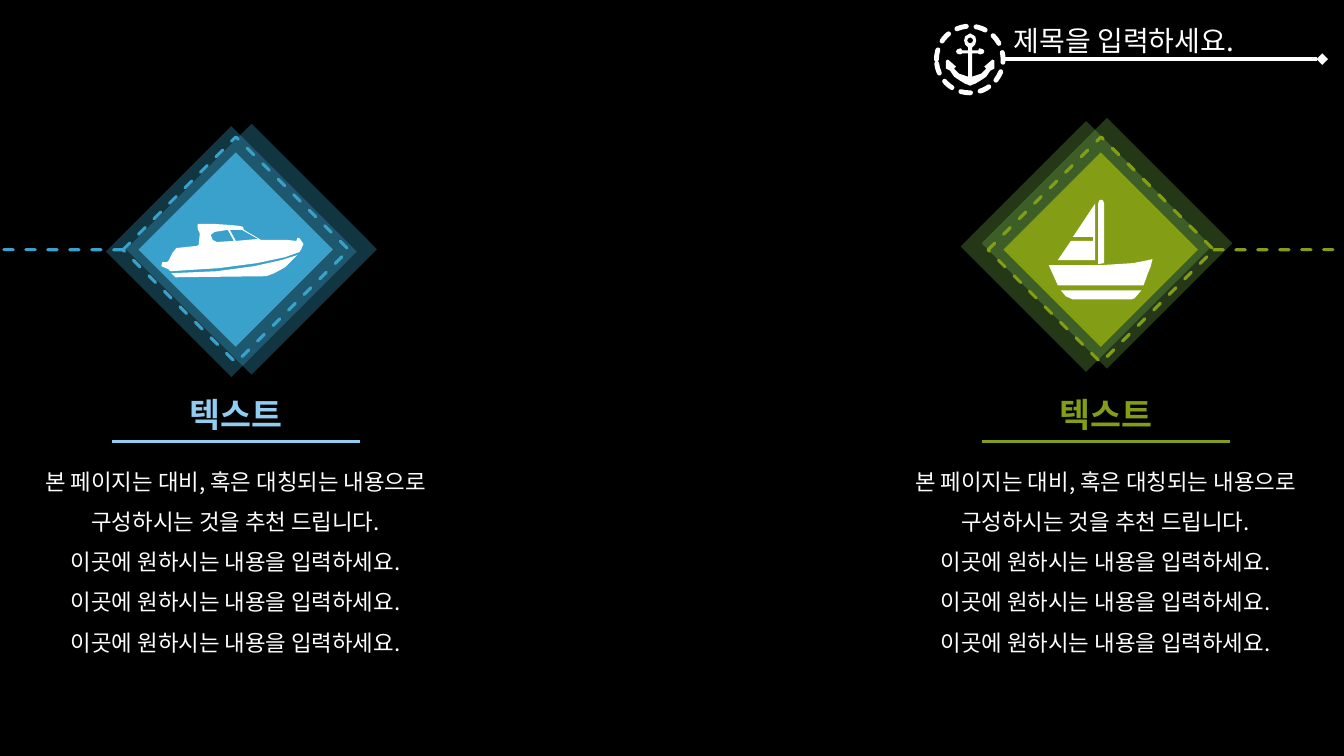
from dataclasses import dataclass
from math import dist

from lxml import etree
from pptx import Presentation
from pptx.dml.color import RGBColor
from pptx.enum.dml import MSO_LINE
from pptx.enum.shapes import MSO_CONNECTOR, MSO_SHAPE
from pptx.enum.text import MSO_ANCHOR, MSO_AUTO_SIZE, PP_ALIGN
from pptx.oxml.ns import qn
from pptx.util import Cm, Pt

DASH, SHORT_DASH = MSO_LINE.DASH, MSO_LINE.SQUARE_DOT
DIAMOND, OVAL, RECTANGLE = MSO_SHAPE.DIAMOND, MSO_SHAPE.OVAL, MSO_SHAPE.RECTANGLE
STRAIGHT = MSO_CONNECTOR.STRAIGHT
TOP, NO_AUTOSIZE = MSO_ANCHOR.TOP, MSO_AUTO_SIZE.NONE
LEFT, CENTER = PP_ALIGN.LEFT, PP_ALIGN.CENTER
LEFT_SITE, RIGHT_SITE = 1, 3
COMPARISON_LAYOUT = 4


@dataclass(frozen=True)
class Theme:
    font: str = "Noto Sans CJK KR"
    background: str = "000000"
    white: str = "FFFFFF"
    blue: str = "39A1CB"
    light_blue: str = "91CCF1"
    olive: str = "839E15"
    green: str = "70AD47"
    title_size: float = 20
    heading_size: float = 24
    body_size: float = 16
    line_width: float = 2.25
    title_line_width: float = 2.75
    badge_width: float = 3.5


THEME = Theme()
WIDTH, HEIGHT = 33.87, 19.05
CENTER_Y = 6.29
GRID = Cm(0.0254)
SHADE_STOPS = [(0, 0), (15, 65), (52, 100), (87, 70), (100, 0)]

BODY = ["본 페이지는 대비, 혹은 대칭되는 내용으로 구성하시는 것을 추천 드립니다."]
BODY += ["이곳에 원하시는 내용을 입력하세요."] * 3

ANCHOR_HALF = [
    (0, 0), (3.5, 0.5, 6.5, 4, 6.5, 7), (6.5, 10, 4.5, 12, 2.5, 13.5), (2.5, 17), (7.5, 17),
    (8, 15.5, 9.5, 15, 10.5, 15), (12.5, 15, 13.5, 16.5, 13.5, 18),
    (13.5, 20, 12, 21, 10.5, 21), (7.5, 20), (2.5, 20), (2.5, 43),
    (8.5, 43, 14.5, 38, 16.5, 35), (14.5, 33), (21.5, 26), (23.5, 27), (23.5, 35),
    (19.5, 37), (16.5, 47, 4.5, 50, 1.5, 51), (0, 51.5)]
ANCHOR_RING_HALF = [(0, 4), (2, 4, 3, 5.5, 3, 7), (3, 9, 2, 10, 0, 10)]

YACHT_HULL = [(102, 54), (15, 55), (11, 51), (76, 51, 122, 38, 136, 33),
              (121, 54, 102, 54, 102, 54)]
YACHT_CABIN = [
    (8, 47), (10, 49), (80, 48, 128, 34, 138, 30), (140, 27), (142.5, 22), (140, 19),
    (138, 16), (136, 16), (135, 19), (125, 18, 105, 17, 100, 18),
    (83, 8), (82, 5), (82, 5, 57, 0, 37, 2), (37, 7), (39, 11), (39, 14), (38, 23),
    (36, 24), (16, 26), (12, 31), (8, 39), (6, 40), (2, 40), (1, 44), (8, 47)]
YACHT_FRONT_WINDOW = [(97, 17), (75, 19), (69, 8), (81, 8)]
YACHT_SIDE_WINDOW = [(50, 13), (54, 10), (67, 8), (73, 19), (56, 20), (52, 18)]

MAST = [(55, 63), (55, 4), (55, 2, 54, 0, 52, 0), (50, 0, 49, 2, 49, 4), (49, 64)]
SAILBOAT_HULL = [(0, 65), (9, 85), (94, 85), (97, 79, 100, 71, 103, 59),
                 (103, 59, 88, 67, 0, 65)]
KEEL = [(24, 99), (82, 99), (82, 99, 87, 99, 92, 90), (12, 90), (15, 95, 19, 99, 24, 99)]
SAIL = [(46, 60), (46, 4), (24, 37), (44, 37), (44, 41), (22, 41), (9, 60)]


def flatten(outline):
    points = []
    for segment in outline:
        if len(segment) == 2:
            points.append(segment)
            continue
        start, first, second, end = points[-1], segment[:2], segment[2:4], segment[4:]
        steps = 2 if dist(start, end) < 20 else 4
        for step in range(1, steps + 1):
            t = step / steps
            weights = ((1 - t) ** 3, 3 * t * (1 - t) ** 2, 3 * t * t * (1 - t), t ** 3)
            corners = (start, first, second, end)
            points.append(tuple(sum(w * corner[axis] for w, corner in zip(weights, corners))
                                for axis in (0, 1)))
    return points


def mirror(outline):
    half = flatten(outline)
    return half + [(-x, y) for x, y in half[-2:0:-1]]


def style_line(line, color, width, dash=None):
    line.color.rgb = RGBColor.from_string(color)
    line.width = Pt(width)
    if dash is not None:
        line.dash_style = dash
        line._get_or_add_ln().set("cap", "rnd")


def style_fill(shape, color, alpha=None):
    shape.fill.solid()
    shape.fill.fore_color.rgb = RGBColor.from_string(color)
    shape.line.fill.background()
    shape.shadow.inherit = False
    if alpha is not None:
        color_element = shape._element.spPr.find(".//" + qn("a:srgbClr"))
        etree.SubElement(color_element, qn("a:alpha")).set("val", str(alpha * 1000))


def add_shade(slide):
    shape = slide.shapes.add_shape(RECTANGLE, Cm(0.33), 0, Cm(WIDTH - 0.33), Cm(HEIGHT))
    shape.line.fill.background()
    shape.shadow.inherit = False
    shape.fill.gradient()
    shape.fill.gradient_angle = 0
    stops = shape._element.spPr.find(".//" + qn("a:gsLst"))
    for stop in list(stops):
        stops.remove(stop)
    for position, alpha in SHADE_STOPS:
        stop = etree.SubElement(stops, qn("a:gs"), pos=str(position * 1000))
        color = etree.SubElement(stop, qn("a:srgbClr"), val=THEME.background)
        etree.SubElement(color, qn("a:alpha"), val=str(alpha * 1000))
    slide.shapes._spTree.insert(2, shape._element)


def add_icon(slide, left, top, *outlines):
    first, *others = [flatten(outline) for outline in outlines]
    builder = slide.shapes.build_freeform(*first[0], scale=GRID)
    builder.add_line_segments(first[1:], close=True)
    for contour in others:
        builder.move_to(*contour[0])
        builder.add_line_segments(contour[1:], close=True)
    style_fill(builder.convert_to_shape(Cm(left), Cm(top)), THEME.white)


def add_filled_diamond(slide, left, top, size, color, alpha=None):
    shape = slide.shapes.add_shape(DIAMOND, Cm(left), Cm(top), Cm(size), Cm(size))
    style_fill(shape, color, alpha)


def add_dashed_outline(slide, kind, left, top, size, color, width, dash):
    shape = slide.shapes.add_shape(kind, Cm(left), Cm(top), Cm(size), Cm(size))
    shape.fill.background()
    shape.shadow.inherit = False
    style_line(shape.line, color, width, dash)
    return shape


def add_line(slide, start, end, y, color, width, dash=None):
    line = slide.shapes.add_connector(STRAIGHT, Cm(start), Cm(y), Cm(end), Cm(y))
    style_line(line.line, color, width, dash)
    etree.SubElement(line._element.spPr, qn("a:effectLst"))
    return line


def fill_placeholder(shape, box, texts, size, color, bold=False, align=CENTER,
                     wrap=False, spacing=1.0):
    shape.left, shape.top, shape.width, shape.height = map(Cm, box)
    frame = shape.text_frame
    frame.text = "\n".join(texts)
    for name, value in {"word_wrap": wrap, "auto_size": NO_AUTOSIZE,
                        "vertical_anchor": TOP}.items():
        setattr(frame, name, value)
    paragraph_format = {"alignment": align, "line_spacing": spacing,
                        "space_before": Pt(0), "space_after": Pt(0)}
    font_format = {"name": THEME.font, "size": Pt(size), "bold": bold}
    for paragraph in frame.paragraphs:
        for name, value in paragraph_format.items():
            setattr(paragraph, name, value)
        properties = paragraph._p.get_or_add_pPr()
        properties.set("marL", "0")
        properties.set("indent", "0")
        etree.SubElement(properties, qn("a:buNone"))
        for run in paragraph.runs:
            for name, value in font_format.items():
                setattr(run.font, name, value)
            run.font.color.rgb = RGBColor.from_string(color)
            run_properties = run._r.get_or_add_rPr()
            run_properties.set("kern", "0")
            etree.SubElement(run_properties, qn("a:ea"), typeface=THEME.font)


def add_header(slide):
    fill_placeholder(slide.shapes.title, (25.29, 0.46, 6.63, 1.12), ["제목을 입력하세요."],
                     THEME.title_size, THEME.white, align=LEFT)
    add_dashed_outline(slide, OVAL, 23.6, 0.66, 1.68, THEME.white, THEME.badge_width, SHORT_DASH)
    add_icon(slide, 24.45, 0.84, mirror(ANCHOR_HALF), mirror(ANCHOR_RING_HALF))
    line = add_line(slide, 25.27, 33.32, 1.49, THEME.white, THEME.title_line_width)
    etree.SubElement(line.line._get_or_add_ln(), qn("a:tailEnd")).set("type", "diamond")


def add_column_text(slide, heading, body, center, color):
    fill_placeholder(heading, (center - 1.51, 9.8, 3.02, 1.27), ["텍스트"],
                     THEME.heading_size, color, bold=True)
    add_line(slide, center - 3.12, center + 3.12, 11.12, color, THEME.line_width)
    fill_placeholder(body, (center - 5.94, 11.32, 11.86, 6.4), BODY,
                     THEME.body_size, THEME.white, wrap=True, spacing=1.5)


def add_emblem(slide, center, halos, halo_color, color, edge, site):
    for left, top in halos:
        add_filled_diamond(slide, left, top, 6.32, halo_color, 33)
    frame = add_dashed_outline(slide, DIAMOND, center - 2.84, CENTER_Y - 2.84, 5.69,
                               color, THEME.line_width, DASH)
    add_filled_diamond(slide, center - 2.45, CENTER_Y - 2.45, 4.9, color)
    line = add_line(slide, center, edge, CENTER_Y, color, THEME.line_width, DASH)
    line.begin_connect(frame, site)


def main():
    presentation = Presentation()
    presentation.slide_width, presentation.slide_height = Cm(WIDTH), Cm(HEIGHT)
    slide = presentation.slides.add_slide(presentation.slide_layouts[COMPARISON_LAYOUT])
    slide.background.fill.solid()
    slide.background.fill.fore_color.rgb = RGBColor.from_string(THEME.background)
    _, left_heading, left_body, right_heading, right_body = slide.placeholders

    add_shade(slide)
    add_column_text(slide, left_heading, left_body, 5.95, THEME.light_blue)
    add_emblem(slide, 5.94, [(2.67, 3.18), (3.18, 3.12)], THEME.blue, THEME.blue,
               0, LEFT_SITE)
    add_icon(slide, 4.04, 5.59, YACHT_HULL)
    add_icon(slide, 4.04, 5.59, YACHT_CABIN, YACHT_FRONT_WINDOW, YACHT_SIDE_WINDOW)
    add_header(slide)
    add_column_text(slide, right_heading, right_body, 27.87, THEME.olive)
    add_emblem(slide, 27.74, [(24.21, 3.05), (24.74, 2.97)], THEME.green, THEME.olive,
               33.6, RIGHT_SITE)
    for outline in (MAST, SAILBOAT_HULL, KEEL, SAIL):
        add_icon(slide, 26.43, 5.03, outline)
    presentation.save("out.pptx")


if __name__ == "__main__":
    main()
